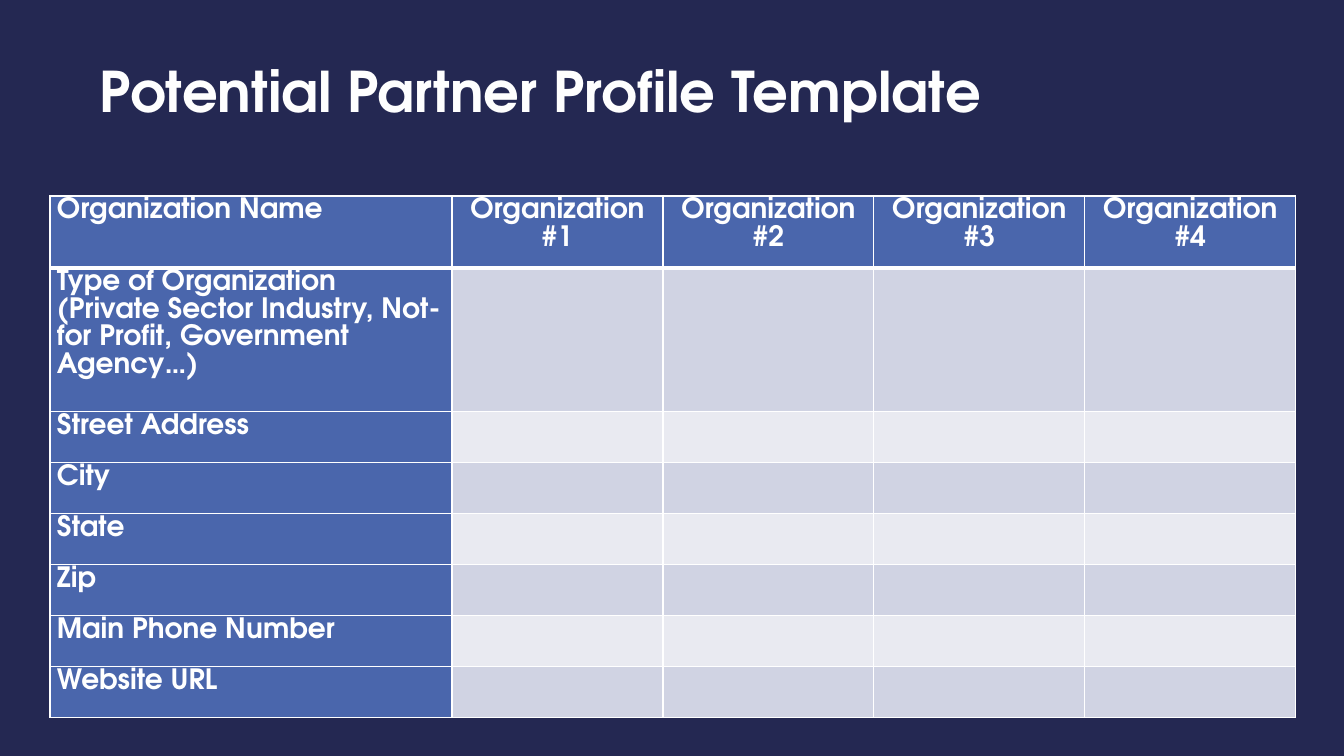
import pptx
import pptx.dml.color
import pptx.enum.text
import pptx.oxml
import pptx.oxml.ns
import pptx.util

RGBColor = pptx.dml.color.RGBColor
PP_ALIGN = pptx.enum.text.PP_ALIGN
MSO_ANCHOR = pptx.enum.text.MSO_ANCHOR

NAVY = RGBColor(0x24, 0x28, 0x52)
BLUE = RGBColor(0x4A, 0x66, 0xAC)
BAND_DARK = RGBColor(0xD0, 0xD3, 0xE3)
BAND_LIGHT = RGBColor(0xE9, 0xEA, 0xF1)
WHITE = RGBColor(0xFF, 0xFF, 0xFF)
TITLE_WHITE = RGBColor(0xFE, 0xFE, 0xFE)

FONT = "TeX Gyre Adventor"
TITLE_FONT = {"name": FONT, "size": pptx.util.Pt(40), "bold": True}
LABEL_FONT = {"name": FONT, "size": pptx.util.Pt(20), "bold": True}

HEADERS = ["Organization Name"] + [f"Organization #{n}" for n in range(1, 5)]
FIELDS = [
    "Type of Organization (Private Sector Industry, Not-for Profit, Government Agency…)",
    "Street Address",
    "City",
    "State",
    "Zip",
    "Main Phone Number",
    "Website URL",
]
COL_WIDTHS = [402] + [211] * 4
ROW_HEIGHTS = [68, 121] + [51] * 6

SHADOW = (
    f'<a:effectLst {pptx.oxml.ns.nsdecls("a")}>'
    '<a:outerShdw blurRad="50800" dist="38100" dir="2700000" algn="tl">'
    '<a:srgbClr val="000000"><a:alpha val="48000"/></a:srgbClr>'
    "</a:outerShdw></a:effectLst>"
)


def px(n):
    """Convert slide pixels (100.8 to the inch) to EMU."""
    return pptx.util.Emu(round(n * 914400 / 100.8))


def set_attrs(obj, values):
    for name, value in values.items():
        setattr(obj, name, value)


def add_run(p, text, font, color):
    r = p.add_run()
    r.text = text
    set_attrs(r.font, font)
    r.font.color.rgb = color
    return r


def add_title(s, text, left, top, width, height):
    tf = s.shapes.add_textbox(px(left), px(top), px(width), px(height)).text_frame
    set_attrs(tf, {"word_wrap": True, "vertical_anchor": MSO_ANCHOR.BOTTOM})
    p = tf.paragraphs[0]
    p.line_spacing = 0.9
    r = add_run(p, text, TITLE_FONT, TITLE_WHITE)
    fill = r.font._element.find(pptx.oxml.ns.qn("a:solidFill"))
    fill.addnext(pptx.oxml.parse_xml(SHADOW))


def set_borders(cell, bottom):
    """Draw white 1 pt edges, with the bottom edge in the given points."""
    tc_pr = cell._tc.get_or_add_tcPr()
    for side, points in {"L": 1, "R": 1, "T": 1, "B": bottom}.items():
        tc_pr.append(pptx.oxml.parse_xml(
            f'<a:ln{side} {pptx.oxml.ns.nsdecls("a")} w="{pptx.util.Pt(points)}">'
            f'<a:solidFill><a:srgbClr val="{WHITE}"/></a:solidFill></a:ln{side}>'
        ))


def fill_cell(cell, color, bottom=1):
    set_borders(cell, bottom)
    cell.fill.solid()
    cell.fill.fore_color.rgb = color


def label_cell(cell, text, align=PP_ALIGN.LEFT):
    set_attrs(cell, {"margin_left": px(7), "margin_right": px(7),
                     "margin_top": 0, "margin_bottom": 0})
    p = cell.text_frame.paragraphs[0]
    set_attrs(p, {"alignment": align, "line_spacing": 1.07})
    add_run(p, text, LABEL_FONT, WHITE)


def add_profile_table(s, left, top):
    table = s.shapes.add_table(
        len(ROW_HEIGHTS), len(COL_WIDTHS), px(left), px(top),
        px(sum(COL_WIDTHS)), px(sum(ROW_HEIGHTS))).table
    for column, width in zip(table.columns, COL_WIDTHS):
        column.width = px(width)
    for row, height in zip(table.rows, ROW_HEIGHTS):
        row.height = px(height)

    for col, text in enumerate(HEADERS):
        cell = table.cell(0, col)
        fill_cell(cell, BLUE, bottom=3)
        label_cell(cell, text, PP_ALIGN.CENTER if col else PP_ALIGN.LEFT)
    for row, text in enumerate(FIELDS, start=1):
        fill_cell(table.cell(row, 0), BLUE)
        label_cell(table.cell(row, 0), text)
        for col in range(1, len(HEADERS)):
            fill_cell(table.cell(row, col), BAND_DARK if row % 2 else BAND_LIGHT)


def main():
    prs = pptx.Presentation()
    set_attrs(prs, {"slide_width": px(1344), "slide_height": px(756)})
    s = prs.slides.add_slide(prs.slide_layouts[6])
    s.background.fill.solid()
    s.background.fill.fore_color.rgb = NAVY
    add_title(s, "Potential Partner Profile Template", 90, 23, 1165, 107)
    add_profile_table(s, 50, 196)
    prs.save("out.pptx")


if __name__ == "__main__":
    main()
